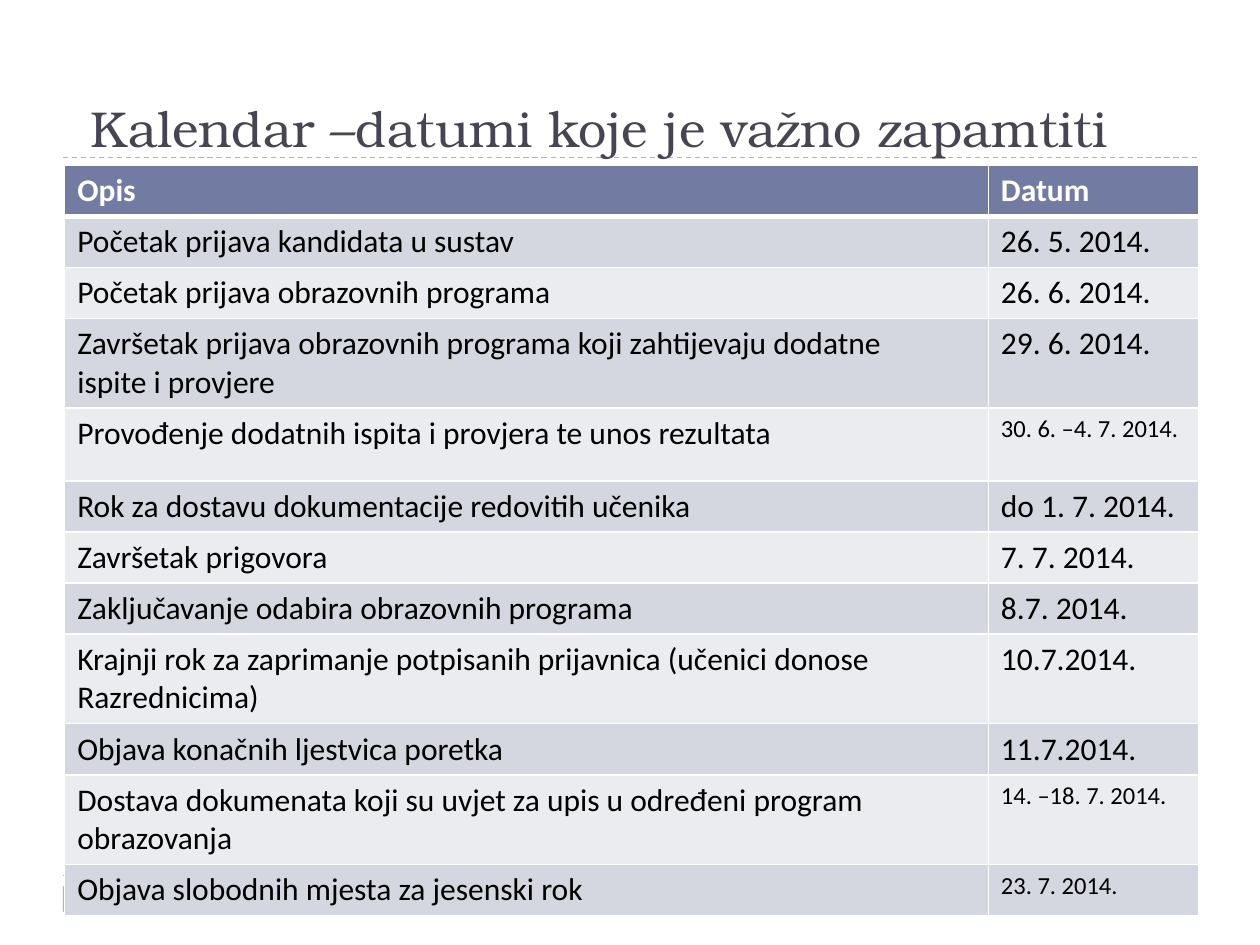
import pptx
import pptx.dml.color
import pptx.enum.dml
import pptx.enum.shapes
import pptx.enum.text
import pptx.oxml
import pptx.oxml.ns
import pptx.util
from dataclasses import dataclass

Pt = pptx.util.Pt


@dataclass(frozen=True)
class Theme:
    title_font: str = "TeX Gyre Bonum"
    body_font: str = "Calibri"
    title_size: float = 28.8
    body_size: float = 18
    small_size: float = 14
    title: str = "464653"
    text: str = "000000"
    white: str = "FFFFFF"
    accent: str = "9FB8CD"
    header: str = "727CA3"
    bands: tuple = ("D5D7E0", "EBECF0")


THEME = Theme()
LEFT, WIDTH = 36, 648
ROW, TALL_ROW, DOUBLE_ROW = 29.2, 41.6, 51.2

# Description lines, date, row height, date size
CALENDAR = [
    (["Opis"], "Datum", ROW, THEME.body_size),
    (["Početak prijava kandidata u sustav"], "26. 5. 2014.", ROW, THEME.body_size),
    (["Početak prijava obrazovnih programa"], "26. 6. 2014.", ROW, THEME.body_size),
    (["Završetak prijava obrazovnih programa koji zahtijevaju dodatne",
      "ispite i provjere"], "29. 6. 2014.", DOUBLE_ROW, THEME.body_size),
    (["Provođenje dodatnih ispita i provjera te unos rezultata"],
     "30. 6. –4. 7. 2014.", TALL_ROW, THEME.small_size),
    (["Rok za dostavu dokumentacije redovitih učenika"],
     "do 1. 7. 2014.", ROW, THEME.body_size),
    (["Završetak prigovora"], "7. 7. 2014.", ROW, THEME.body_size),
    (["Zaključavanje odabira obrazovnih programa"], "8.7. 2014.", ROW, THEME.body_size),
    (["Krajnji rok za zaprimanje potpisanih prijavnica (učenici donose",
      "Razrednicima)"], "10.7.2014.", DOUBLE_ROW, THEME.body_size),
    (["Objava konačnih ljestvica poretka"], "11.7.2014.", ROW, THEME.body_size),
    (["Dostava dokumenata koji su uvjet za upis u određeni program",
      "obrazovanja"], "14. –18. 7. 2014.", DOUBLE_ROW, THEME.small_size),
    (["Objava slobodnih mjesta za jesenski rok"], "23. 7. 2014.", ROW, THEME.small_size),
]


def rgb(value):
    return pptx.dml.color.RGBColor.from_string(value)


def add_span(para, text, font, size, color, bold=False):
    span = para.add_run()
    span.text = text
    span.font.name = font
    span.font.size = Pt(size)
    span.font.bold = bold
    span.font.color.rgb = rgb(color)


def add_rule(page, top):
    rule = page.shapes.add_connector(
        pptx.enum.shapes.MSO_CONNECTOR.STRAIGHT,
        Pt(LEFT), Pt(top), Pt(LEFT + WIDTH), Pt(top))
    rule.line.color.rgb = rgb(THEME.accent)
    rule.line.width = Pt(0.75)
    rule.line.dash_style = pptx.enum.dml.MSO_LINE.DASH
    pptx.oxml.ns.qn("a:effectLst")
    rule._element.spPr.append(pptx.oxml.parse_xml(
        f"<a:effectLst {pptx.oxml.ns.nsdecls('a')}/>"))


def add_marker(page):
    marker = page.shapes.add_shape(
        pptx.enum.shapes.MSO_SHAPE.ISOSCELES_TRIANGLE,
        Pt(33.1), Pt(509), Pt(15.1), Pt(9.4))
    marker.rotation = 90
    marker.shadow.inherit = False
    marker.fill.solid()
    marker.fill.fore_color.rgb = rgb(THEME.accent)
    marker.line.fill.background()


def add_title(page, text):
    box = page.shapes.add_textbox(Pt(LEFT), Pt(12.2), Pt(WIDTH), Pt(77.8))
    frame = box.text_frame
    frame.word_wrap = True
    frame.vertical_anchor = pptx.enum.text.MSO_ANCHOR.BOTTOM
    frame.margin_left = Pt(16)
    frame.margin_bottom = 0
    add_span(frame.paragraphs[0], text, THEME.title_font, THEME.title_size, THEME.title)


def set_borders(cell, bottom_width):
    properties = cell._tc.get_or_add_tcPr()
    widths = {"lnL": 1, "lnR": 1, "lnT": 1, "lnB": bottom_width}
    # Borders come before the fill in the cell properties
    for position, (side, width) in enumerate(widths.items()):
        properties.insert(position, pptx.oxml.parse_xml(
            f"<a:{side} {pptx.oxml.ns.nsdecls('a')} w='{Pt(width)}'><a:solidFill>"
            f"<a:srgbClr val='{THEME.white}'/></a:solidFill></a:{side}>"))


def fill_cell(cell, lines, size, is_header, background):
    cell.fill.solid()
    cell.fill.fore_color.rgb = rgb(background)
    set_borders(cell, 3 if is_header else 1)
    frame = cell.text_frame
    for index, line in enumerate(lines):
        para = frame.add_paragraph() if index else frame.paragraphs[0]
        add_span(para, line, THEME.body_font, size,
                 THEME.white if is_header else THEME.text, is_header)


def add_calendar(page):
    height = sum(row[2] for row in CALENDAR)
    table = page.shapes.add_table(
        len(CALENDAR), 2, Pt(37), Pt(94.4), Pt(WIDTH), Pt(height)).table
    for column, width in zip(table.columns, (527.8, 120.2)):
        column.width = Pt(width)
    for index, (lines, date, row_height, date_size) in enumerate(CALENDAR):
        table.rows[index].height = Pt(row_height)
        is_header = index == 0
        background = THEME.header if is_header else THEME.bands[(index - 1) % 2]
        fill_cell(table.cell(index, 0), lines, THEME.body_size, is_header, background)
        fill_cell(table.cell(index, 1), [date], date_size, is_header, background)


def main():
    deck = pptx.Presentation()
    deck.slide_width, deck.slide_height = Pt(720), Pt(540)
    page = deck.slides.add_slide(deck.slide_layouts[6])

    # Page furniture
    for top in (500.4, 90):
        add_rule(page, top)
    add_marker(page)

    # Content
    add_title(page, "Kalendar –datumi koje je važno zapamtiti")
    add_calendar(page)
    deck.save("out.pptx")


if __name__ == "__main__":
    main()
